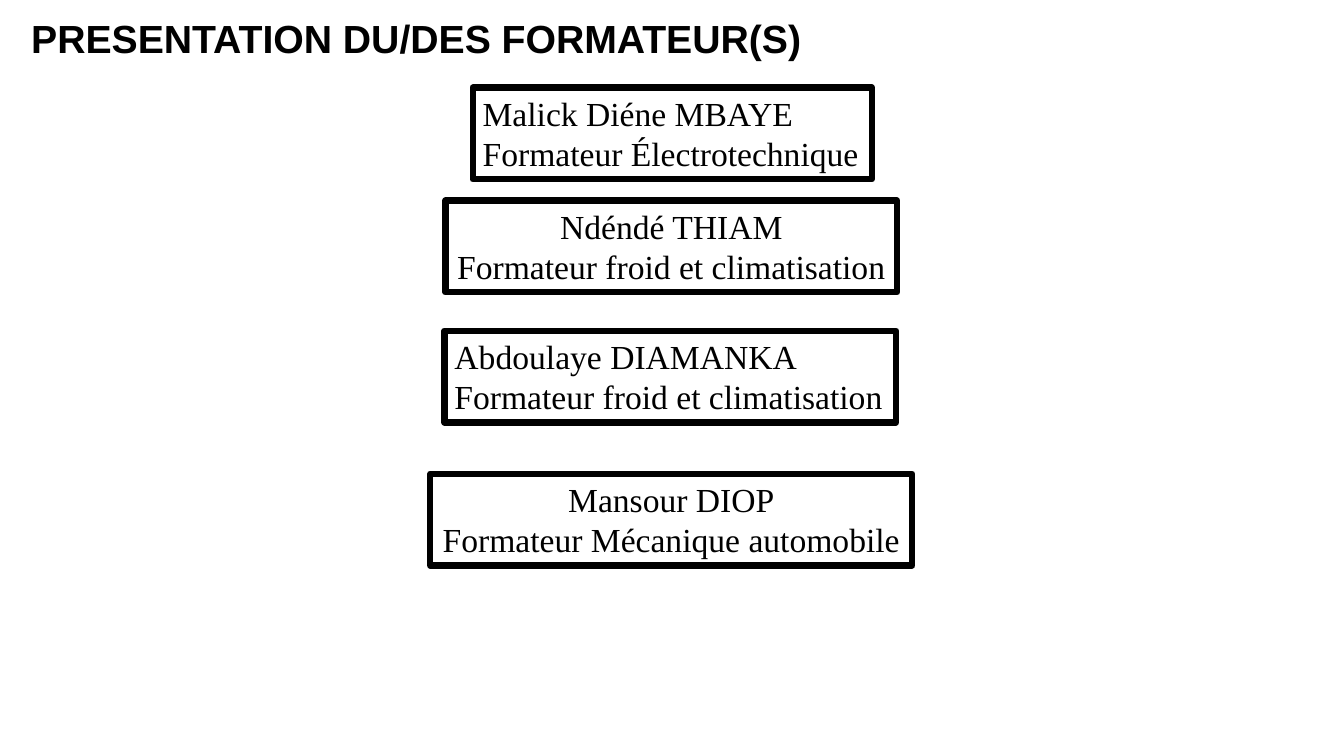
from dataclasses import dataclass

from pptx import Presentation
from pptx.dml.color import RGBColor
from pptx.enum.shapes import MSO_SHAPE
from pptx.enum.text import MSO_ANCHOR, MSO_AUTO_SIZE, PP_ALIGN
from pptx.util import Pt

RECTANGLE = MSO_SHAPE.RECTANGLE
TOP, MIDDLE = MSO_ANCHOR.TOP, MSO_ANCHOR.MIDDLE
LEFT, CENTER = PP_ALIGN.LEFT, PP_ALIGN.CENTER
NO_AUTOSIZE = MSO_AUTO_SIZE.NONE

COLORS = {"ink": "000000"}
TITLE_FONT, CARD_FONT = "Arial", "Times New Roman"
CARD_HEIGHT = 65.5


@dataclass(frozen=True)
class Trainer:
    name: str
    role: str
    left: float
    top: float
    width: float
    align: PP_ALIGN


TRAINERS = [
    Trainer("Malick Diéne MBAYE", "Formateur Électrotechnique", 337.7, 62.6, 285.1, LEFT),
    Trainer("Ndéndé THIAM", "Formateur froid et climatisation", 318.2, 143.3, 322.6, CENTER),
    Trainer("Abdoulaye DIAMANKA", "Formateur froid et climatisation", 317.5, 236.2, 322.6, LEFT),
    Trainer("Mansour DIOP", "Formateur Mécanique automobile", 307.4, 338.4, 344.2, CENTER),
]


def ink() -> RGBColor:
    return RGBColor.from_string(COLORS["ink"])


def format_text(tf, font: str, size: float, bold: bool, align: PP_ALIGN) -> None:
    for p in tf.paragraphs:
        p.alignment = align
        for r in p.runs:
            r.font.name = font
            r.font.size = Pt(size)
            r.font.bold = bold
            r.font.color.rgb = ink()


def add_title(slide, text: str) -> None:
    sp = slide.shapes.title
    sp.left, sp.top, sp.width, sp.height = Pt(15.1), Pt(6.5), Pt(832.3), Pt(41)
    tf = sp.text_frame
    tf.text = text
    tf.word_wrap = True
    tf.auto_size = NO_AUTOSIZE
    tf.vertical_anchor = TOP
    format_text(tf, TITLE_FONT, 28, True, LEFT)


def add_trainer(slide, trainer: Trainer) -> None:
    sp = slide.shapes.add_shape(
        RECTANGLE, Pt(trainer.left), Pt(trainer.top), Pt(trainer.width), Pt(CARD_HEIGHT)
    )
    sp.shadow.inherit = False
    sp.fill.background()
    sp.line.color.rgb = ink()
    sp.line.width = Pt(4.5)
    tf = sp.text_frame
    tf.text = f"{trainer.name}\n{trainer.role}"
    tf.word_wrap = True
    tf.vertical_anchor = MIDDLE
    format_text(tf, CARD_FONT, 24, False, trainer.align)
    for p in tf.paragraphs:
        p.line_spacing = Pt(28.6)


def main() -> None:
    prs = Presentation()
    prs.slide_width, prs.slide_height = Pt(960), Pt(540)
    slide = prs.slides.add_slide(prs.slide_layouts[5])
    add_title(slide, "PRESENTATION DU/DES FORMATEUR(S)")
    for trainer in TRAINERS:
        add_trainer(slide, trainer)
    prs.save("out.pptx")


if __name__ == "__main__":
    main()
